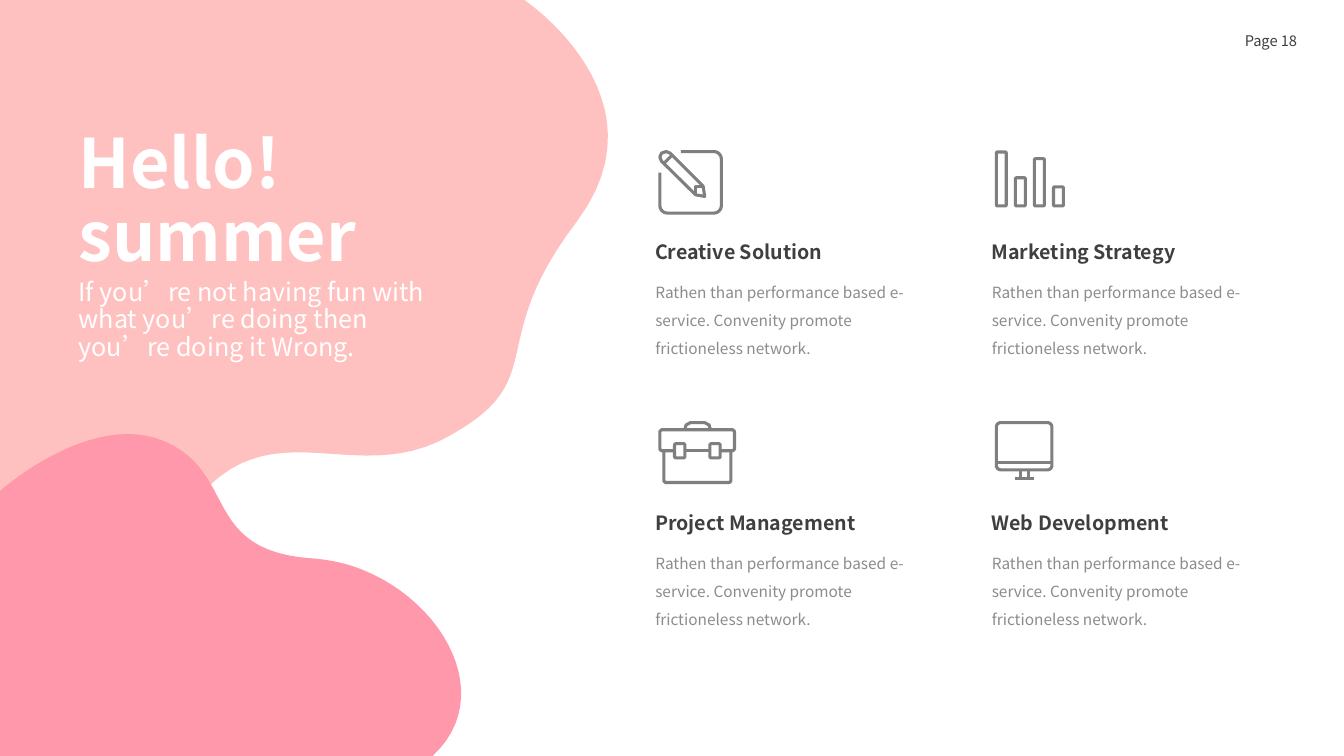
from math import cos, radians, sin

from lxml import etree
from pptx import Presentation
from pptx import util as u
from pptx.dml import color
from pptx.enum import text
from pptx.oxml import ns

COLORS = {"blush": "FFC0C0", "pink": "FF98AB", "white": "FFFFFF",
          "dark": "3F3F3F", "grey": "8C8C8C", "icon": "7F7F7F"}
FONT = "Noto Sans CJK SC"
UNITS = 1000
DESCRIPTION = ("Rathen than performance based e-service. "
               "Convenity promote frictioneless network.")

BLUSH_START = (4.47, 13.26)
BLUSH_CURVES = [
    ((6.55, 9.88), (8.79, 12.45), (11.35, 10.97)),
    ((13.92, 9.53), (12.17, 8.69), (14.53, 5.59)),
    ((16.89, 2.46), (13.21, 0), (13.21, 0)),
    ((0, 0), (0, 0), (0, 0)),
    ((0, 16.81), (0, 16.81), (0, 16.81)),
    ((1.19, 16.81), (2.46, 16.48), (4.47, 13.26)),
]
PINK_START = (9.12, 14.35)
PINK_CURVES = [
    ((8.74, 14.2), (8.31, 14.1), (7.85, 14.07)),
    ((5.08, 13.87), (5.99, 11.94), (4.17, 11.13)),
    ((2.31, 10.31), (0, 12.37), (0, 12.37)),
    ((0, 19.05), (0, 19.05), (0, 19.05)),
    ((10.9, 19.05), (10.9, 19.05), (10.9, 19.05)),
    ((12.5, 17.58), (11.23, 15.19), (9.12, 14.35)),
]


def rgb(name):
    """Return the named palette colour."""
    return color.RGBColor.from_string(COLORS[name])


def bezier(start, curves, steps=24):
    """Sample a chain of cubic curves into points."""
    points = [start]
    for first, second, end in curves:
        origin = points[-1]
        for step in range(1, steps + 1):
            t = step / steps
            weights = ((1 - t) ** 3, 3 * t * (1 - t) ** 2, 3 * t * t * (1 - t), t ** 3)
            corners = (origin, first, second, end)
            points.append(tuple(sum(w * c[axis] for w, c in zip(weights, corners))
                                for axis in (0, 1)))
    return points


def rounded(left, top, right, bottom, radius):
    """Return the points of a rounded box, clockwise from its left top corner."""
    centres = [(left + radius, top + radius), (right - radius, top + radius),
               (right - radius, bottom - radius), (left + radius, bottom - radius)]
    return [(x + radius * cos(radians(180 + 90 * turn + angle)),
             y + radius * sin(radians(180 + 90 * turn + angle)))
            for turn, (x, y) in enumerate(centres) for angle in range(0, 91, 15)]


def draw_outline(page, left, top, contours):
    """Build one freeform from (points, closed) contours in centimetres."""
    builder = None
    for points, closed in contours:
        scaled = [((left + x) * UNITS, (top + y) * UNITS) for x, y in points]
        if builder is None:
            builder = page.shapes.build_freeform(*scaled[0], scale=u.Cm(1) / UNITS)
        else:
            builder.move_to(*scaled[0])
        builder.add_line_segments(scaled[1:], close=closed)
    outline = builder.convert_to_shape()
    outline.shadow.inherit = False
    return outline


def add_blob(page, start, curves, fill):
    """Place a filled wavy area behind everything else."""
    blob = draw_outline(page, 0, 0, [(bezier(start, curves), True)])
    blob.fill.solid()
    blob.fill.fore_color.rgb = rgb(fill)
    blob.line.fill.background()
    page.shapes._spTree.insert(2, blob._element)


def pencil_icon():
    """Return the contours of a pencil over an open frame."""
    frame = [(0.57, 0.04)] + rounded(0.04, 0.04, 1.59, 1.59, 0.19)[7:] + [(0.04, 0.57)]
    pencil = [(1.17, 1.17), (0.94, 1.13), (0.08, 0.28), (0.04, 0.18),
              (0.08, 0.08), (0.2, 0.04), (0.3, 0.08), (1.13, 0.91)]
    nib = [(0.93, 1.1), (0.93, 0.92), (1.1, 0.92)]
    return [(frame, False), (pencil, True), (nib, False),
            ([(0.15, 0.33), (0.33, 0.15)], False)]


def bars_icon():
    """Return the contours of four bars on one baseline."""
    return [(rounded(0.04 + 0.48 * i, top, 0.29 + 0.48 * i, 1.41, 0.03), True)
            for i, top in enumerate((0.05, 0.7, 0.22, 0.93))]


def briefcase_icon():
    """Return the contours of a briefcase with two clasps."""
    lid = [(0.41, 0.75), (0.08, 0.75), (0.04, 0.71), (0.04, 0.26), (0.08, 0.22),
           (1.88, 0.22), (1.92, 0.26), (1.92, 0.71), (1.88, 0.75), (1.56, 0.75)]
    body = [(0.14, 0.75), (0.14, 1.51), (0.18, 1.55),
            (1.79, 1.55), (1.83, 1.51), (1.83, 0.75)]
    handle = [(0.67, 0.2), (0.7, 0.1), (0.81, 0.04),
              (1.17, 0.04), (1.28, 0.1), (1.31, 0.2)]
    clasps = [(rounded(x, 0.57, x + 0.26, 0.93, 0.04), True) for x in (0.41, 1.3)]
    lines = [lid, body, handle, [(0.67, 0.75), (1.3, 0.75)]]
    return [(line, False) for line in lines] + clasps


def monitor_icon():
    """Return the contours of a screen on a stand."""
    lines = [[(0.04, 1.04), (1.44, 1.04)], [(0.65, 1.23), (0.65, 1.45)],
             [(0.85, 1.23), (0.85, 1.45)], [(0.5, 1.45), (1, 1.45)]]
    return [(rounded(0.04, 0.04, 1.44, 1.23, 0.11), True)] + [(line, False) for line in lines]


def add_icon(page, left, top, contours):
    """Draw a line icon at the given corner."""
    icon = draw_outline(page, left, top, contours)
    icon.fill.background()
    icon.line.color.rgb = rgb("icon")
    icon.line.width = u.Pt(2.2)
    etree.SubElement(icon.line._get_or_add_ln(), ns.qn("a:round"))


def fill_text(holder, box, words, size, ink, bold=False, spacing=1.0,
              align=text.PP_ALIGN.LEFT, anchor=text.MSO_ANCHOR.TOP):
    """Move a text holder to its box and write formatted words in it."""
    holder.left, holder.top, holder.width, holder.height = map(u.Cm, box)
    frame = holder.text_frame
    frame.text = words
    frame.word_wrap = True
    frame.auto_size = text.MSO_AUTO_SIZE.NONE
    frame.vertical_anchor = anchor
    for para in frame.paragraphs:
        para.alignment = align
        para.line_spacing = spacing
        para.space_before = u.Pt(0)
        props = para._p.get_or_add_pPr()
        props.set("marL", "0")
        props.set("indent", "0")
        etree.SubElement(props, ns.qn("a:buNone"))
        for span in para.runs:
            span.font.name = FONT
            span.font.size = u.Pt(size)
            span.font.bold = bold
            span.font.color.rgb = rgb(ink)
            east = etree.Element(ns.qn("a:ea"), typeface=FONT)
            span.font._element.find(ns.qn("a:latin")).addnext(east)


def add_label(page, box, words, size, ink, **style):
    """Add a text box with formatted words."""
    fill_text(page.shapes.add_textbox(0, 0, 0, 0), box, words, size, ink, **style)


def add_greeting(page, left, top):
    """Place the title and the line below it."""
    fill_text(page.shapes.title, (left, top, 11.35, 3.33), "Hello!\vsummer", 48.6, "white",
              bold=True, spacing=0.9, anchor=text.MSO_ANCHOR.MIDDLE)
    add_label(page, (left, top + 3.48, 10.13, 2.41),
              "If you’re not having fun with what you’re doing then you’re doing it Wrong.",
              18, "white", spacing=0.9)


def add_feature(page, body, left, top, heading, contours):
    """Place an icon, a heading and a description in one cell."""
    add_icon(page, left + 0.33, top, contours)
    add_label(page, (left, top + 2.13, 7.49, 0.86), heading, 14, "dark", bold=True)
    fill_text(body, (left, top + 3, 6.99, 2.59), DESCRIPTION, 11, "grey", spacing=1.5)


def main():
    """Build the slide and save the deck."""
    deck = Presentation()
    deck.slide_width, deck.slide_height = u.Cm(33.87), u.Cm(19.05)
    page = deck.slides.add_slide(deck.slide_layouts.get_by_name("Comparison"))
    add_blob(page, PINK_START, PINK_CURVES, "pink")
    add_blob(page, BLUSH_START, BLUSH_CURVES, "blush")
    add_greeting(page, 1.73, 3.45)
    features = [("Creative Solution", pencil_icon()), ("Marketing Strategy", bars_icon()),
                ("Project Management", briefcase_icon()), ("Web Development", monitor_icon())]
    bodies = [holder for holder in page.placeholders if 1 <= holder.placeholder_format.idx <= 4]
    for i, (body, (heading, contours)) in enumerate(zip(bodies, features)):
        row, column = divmod(i, 2)
        add_feature(page, body, 16.26 + 8.48 * column, 3.78 + 6.83 * row, heading, contours)
    add_label(page, (25.32, 0.51, 7.62, 1.02), "Page 18", 10.5, "dark",
              align=text.PP_ALIGN.RIGHT, anchor=text.MSO_ANCHOR.MIDDLE)
    deck.save("out.pptx")


if __name__ == "__main__":
    main()
